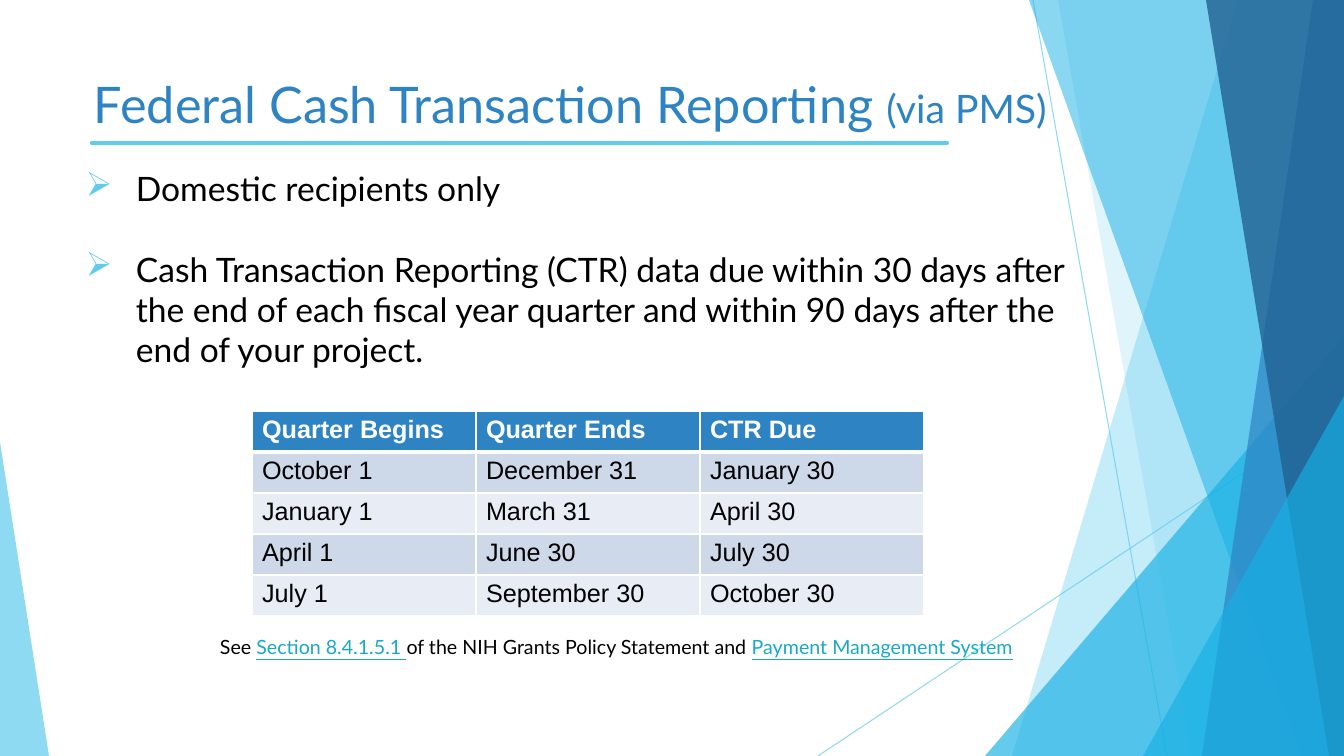
from lxml.etree import SubElement
from pptx import Presentation
from pptx.dml.color import RGBColor
from pptx.enum.shapes import MSO_CONNECTOR as Connector, MSO_SHAPE as Shape
from pptx.oxml.ns import qn
from pptx.util import Pt

WIDTH, HEIGHT = 1344, 756
SKY, AZURE, BLUE, NAVY = "5FCBEF", "17B0E4", "2E83C3", "226292"
BLACK, WHITE, LINK = "000000", "FFFFFF", "18A9C4"
BANDS = ["CDD9E9", "E8EDF5"]

THIN_LINES = [(1033, 0, 1167, HEIGHT), (WIDTH, 406, 818, HEIGHT)]
TITLE_RULE = (92, 143, 947, 143)

# top-left x, bottom-left x, colour, opacity; or left, top, apex, colour, opacity
RIBBONS = [
    ("strip", 1238, 1012, SKY, 36),
    ("strip", 1058, 1192, SKY, 20),
    ("peak", 985, 336, AZURE, 66),
    ("strip", 1029, 1301, AZURE, 50),
    ("strip", 1313, 1202, BLUE, 70),
    ("strip", 1206, 1329, NAVY, 80),
    ("peak", 1143, 396, AZURE, 66),
]
LEFT_PEAK = (0, 442, 49)

TITLE = [("Federal Cash Transaction Reporting ", 36), ("(via PMS)", 28)]
BULLETS = [
    "Domestic recipients only",
    "Cash Transaction Reporting (CTR) data due within 30 days after the end of "
    "each fiscal year quarter and within 90 days after the end of your project.",
]
QUARTERS = [
    ("Quarter Begins", "Quarter Ends", "CTR Due"),
    ("October 1", "December 31", "January 30"),
    ("January 1", "March 31", "April 30"),
    ("April 1", "June 30", "July 30"),
    ("July 1", "September 30", "October 30"),
]
FOOTNOTE = [
    ("See ", False),
    ("Section 8.4.1.5.1 ", True),
    ("of the NIH Grants Policy Statement and ", False),
    ("Payment Management System", True),
]


def px(length):
    return round(length * 914400 / 100.8)


def rgb(color):
    return RGBColor.from_string(color)


def set_opacity(drawn, percent):
    for color in drawn.element.iter(qn("a:srgbClr")):
        SubElement(color, qn("a:alpha"), val=str(percent * 1000))


def add_line(ends, weight, opacity=100):
    line = slide.shapes.add_connector(Connector.STRAIGHT, *map(px, ends))
    line.line.color.rgb = rgb(SKY)
    line.line.width = Pt(weight)
    line.get_or_add_ln().set("cap", "rnd")
    SubElement(line.element.spPr, qn("a:effectLst"))
    set_opacity(line, opacity)


def paint(ribbon, color, opacity):
    ribbon.shadow.inherit = False
    ribbon.fill.solid()
    ribbon.fill.fore_color.rgb = rgb(color)
    ribbon.line.fill.background()
    set_opacity(ribbon, opacity)


def add_strip(top_x, bottom_x):
    outline = slide.shapes.build_freeform(px(top_x), 0, scale=1.0)
    corners = [(WIDTH, 0), (WIDTH, HEIGHT), (bottom_x, HEIGHT)]
    outline.add_line_segments([(px(x), px(y)) for x, y in corners], close=True)
    return outline.convert_to_shape()


def add_peak(left, top, right=WIDTH, apex=1):
    peak = slide.shapes.add_shape(
        Shape.ISOSCELES_TRIANGLE, px(left), px(top), px(right - left), px(HEIGHT - top))
    peak.adjustments[0] = apex
    return peak


def add_frame(left, top, width, height):
    frame = slide.shapes.add_textbox(*map(px, (left, top, width, height))).text_frame
    frame.word_wrap = True
    return frame


def add_text(paragraph, text, size=24, color=BLACK, font="Lato", bold=False, underline=False):
    run = paragraph.add_run()
    run.text = text
    run.font.name = font
    run.font.size = Pt(size)
    run.font.bold = bold
    run.font.underline = underline
    run.font.color.rgb = rgb(color)


def add_bullet(paragraph, indent):
    props = paragraph._p.get_or_add_pPr()
    props.set("marL", str(px(indent)))
    props.set("indent", str(-px(indent)))
    SubElement(SubElement(props, qn("a:buClr")), qn("a:srgbClr"), val=SKY)
    SubElement(props, qn("a:buChar"), char="➢")


def add_border(cell, side, weight):
    border = SubElement(cell._tc.get_or_add_tcPr(), qn("a:" + side), w=str(Pt(weight)))
    SubElement(SubElement(border, qn("a:solidFill")), qn("a:srgbClr"), val=WHITE)


def add_quarters(left, top, column, row_height):
    rows, columns = len(QUARTERS), len(QUARTERS[0])
    table = slide.shapes.add_table(
        rows, columns, px(left), px(top), px(column * columns), px(row_height * rows)).table
    for r, dates in enumerate(QUARTERS):
        header = r == 0
        for c, date in enumerate(dates):
            cell = table.cell(r, c)
            for side in ("lnL", "lnR", "lnT", "lnB"):
                heavy = (header and side == "lnB") or (r == 1 and side == "lnT")
                add_border(cell, side, 3 if heavy else 1)
            cell.fill.solid()
            cell.fill.fore_color.rgb = rgb(BLUE if header else BANDS[(r - 1) % 2])
            add_text(cell.text_frame.paragraphs[0], date, size=18, font="Arial",
                     color=WHITE if header else BLACK, bold=header)


deck = Presentation()
deck.slide_width, deck.slide_height = px(WIDTH), px(HEIGHT)
slide = deck.slides.add_slide(deck.slide_layouts[6])

for ends in THIN_LINES:
    add_line(ends, 0.75, 70)
for kind, first, second, color, opacity in RIBBONS:
    add_ribbon = add_strip if kind == "strip" else add_peak
    paint(add_ribbon(first, second), color, opacity)
paint(add_peak(*LEFT_PEAK, apex=0), SKY, 70)
add_line(TITLE_RULE, 3)

title = add_frame(84, 68, 1142, 145).paragraphs[0]
for text, size in TITLE:
    add_text(title, text, size=size, color=BLUE)

body = add_frame(76, 163, 1025, 323)
for i, text in enumerate(BULLETS):
    bullet = body.add_paragraph() if i else body.paragraphs[0]
    add_bullet(bullet, 50)
    if i:
        bullet.space_before = Pt(28.8)
    add_text(bullet, text)

add_quarters(252, 411, 224, 41)

footnote = add_frame(210, 630, 882, 34).paragraphs[0]
for text, linked in FOOTNOTE:
    add_text(footnote, text, size=14, color=LINK if linked else BLACK, underline=linked)

deck.save("out.pptx")
